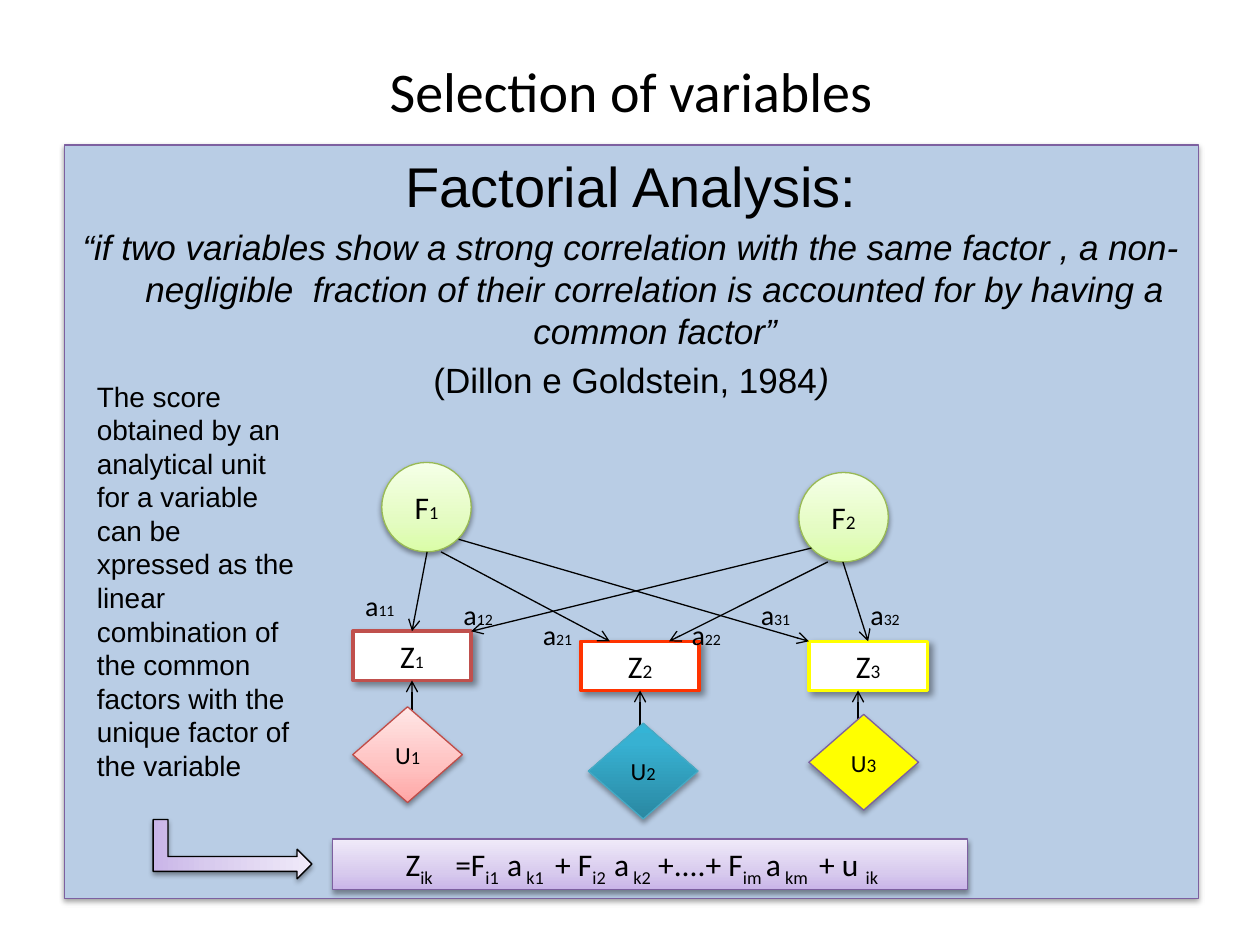
from collections import namedtuple
from dataclasses import dataclass

from lxml import etree
from pptx import Presentation
from pptx.dml import color
from pptx.enum import shapes, text
from pptx.oxml import ns
from pptx.util import Inches, Pt

Box = namedtuple("Box", "left top width height")
KIND = shapes.MSO_SHAPE


@dataclass(frozen=True)
class Theme:
    """Hold the colours, fonts, type sizes and shadows."""
    ink: str = "000000"
    panel: str = "B9CDE5"
    purple: str = "7D60A0"
    white: str = "FFFFFF"
    yellow: str = "FFFF00"
    red: str = "C0504D"
    orange: str = "FF3300"
    rose: str = "BF4C48"
    teal: str = "46AAC5"
    green: str = "98B955"
    green_fade: tuple = ((0, "DAFDA7"), (35, "E4FCC2"), (100, "F5FFE7"))
    rose_fade: tuple = ((0, "FFA6A5"), (35, "FFC0BF"), (100, "FFE7E7"))
    teal_fade: tuple = ((0, "2A88A2"), (80, "37B1D2"), (100, "34B4D6"))
    purple_fade: tuple = ((0, "C9B5E8"), (35, "D8CBEE"), (100, "F0EAF9"))
    sans: str = "Arial"
    plain: str = "Calibri"
    heading: float = 32
    quote: float = 20
    node: float = 18
    note: float = 16
    unique: float = 14
    weight: float = 0.75
    frame: float = 2
    soft: tuple = (38, 3.1, 1.6, 90)
    dim: tuple = (35, 3.1, 1.8, 90)
    slanted: tuple = (40, 4, 3, 45)


THEME = Theme()


def add_element(parent, tag, **attributes):
    """Append a drawing element to the parent."""
    return etree.SubElement(parent, ns.qn(tag), attributes)


def inner(box, left, top, width, height):
    """Return a box measured from the corner of another box."""
    return Box(box.left + left, box.top + top, width, height)


def lengths(box):
    """Convert a box to lengths."""
    return [Inches(value) for value in box]


def style_run(run, size, font=THEME.plain, italic=None, base=0):
    """Set the type of a run."""
    run.font.size = Pt(size)
    run.font.name = font
    run.font.italic = italic
    run.font.color.rgb = color.RGBColor.from_string(THEME.ink)
    if base:
        run.font._element.set("baseline", str(base * 1000))


def write_label(paragraph, letter, size, index, small):
    """Write a letter followed by a smaller index."""
    for words, points in ((letter, size), (index, small)):
        run = paragraph.add_run()
        run.text = words
        style_run(run, points)


def paint(shape, fill, line, weight=THEME.weight, shadow=THEME.soft):
    """Give a shape its fill, outline and shadow."""
    if isinstance(fill, str):
        shape.fill.solid()
        shape.fill.fore_color.rgb = color.RGBColor.from_string(fill)
    else:
        shape.fill.gradient()
        shape.fill.gradient_angle = 90
        stops = shape._element.spPr.find(".//" + ns.qn("a:gsLst"))
        for stop in list(stops):
            stops.remove(stop)
        for position, value in fill:
            stop = add_element(stops, "a:gs", pos=str(position * 1000))
            add_element(stop, "a:srgbClr", val=value)
    shape.line.color.rgb = color.RGBColor.from_string(line)
    shape.line.width = Pt(weight)
    shape.shadow.inherit = False
    alpha, blur, distance, angle = shadow
    effects = shape._element.spPr.find(ns.qn("a:effectLst"))
    outer = add_element(effects, "a:outerShdw", blurRad=str(Pt(blur)), dist=str(Pt(distance)),
                        dir=str(angle * 60000), rotWithShape="0")
    tint = add_element(outer, "a:srgbClr", val=THEME.ink)
    add_element(tint, "a:alpha", val=str(alpha * 1000))


def add_node(slide, kind, box, label, *look):
    """Add a painted shape with an indexed letter."""
    shape = slide.shapes.add_shape(kind, *lengths(box))
    paint(shape, *look)
    frame = shape.text_frame
    frame.word_wrap = False
    frame.vertical_anchor = text.MSO_ANCHOR.MIDDLE
    frame.paragraphs[0].alignment = text.PP_ALIGN.CENTER
    write_label(frame.paragraphs[0], *label)


def add_arrow(slide, box, start_x, start_y, end_x, end_y):
    """Add an arrow between two points of a box."""
    arrow = slide.shapes.add_connector(
        shapes.MSO_CONNECTOR.STRAIGHT, Inches(box.left + start_x), Inches(box.top + start_y),
        Inches(box.left + end_x), Inches(box.top + end_y))
    arrow.line.color.rgb = color.RGBColor.from_string(THEME.ink)
    arrow.line.width = Pt(THEME.weight)
    add_element(arrow.line._ln, "a:tailEnd", type="arrow")
    add_element(arrow._element.spPr, "a:effectLst")


def add_title(slide, box):
    """Fill the title placeholder."""
    title = slide.shapes.title
    title.left, title.top, title.width, title.height = lengths(box)
    title.text_frame.text = "Selection of variables"
    title.text_frame.vertical_anchor = text.MSO_ANCHOR.MIDDLE
    style_run(title.text_frame.paragraphs[0].runs[0], THEME.heading)


def add_panel(slide, box):
    """Fill the body placeholder with the heading and quotation."""
    body = slide.placeholders[1]
    body.left, body.top, body.width, body.height = lengths(box)
    paint(body, THEME.panel, THEME.purple)
    frame = body.text_frame
    frame.auto_size = text.MSO_AUTO_SIZE.NONE
    frame.text = ("Factorial Analysis:\n“if two variables show a strong correlation with the same "
                  "factor , a non- negligible  fraction of their correlation is accounted for by "
                  "having a common factor”\n(Dillon e Goldstein, 1984")
    frame.paragraphs[2].add_run().text = ")"
    for paragraph in frame.paragraphs:
        paragraph.alignment = text.PP_ALIGN.CENTER
        properties = paragraph._p.get_or_add_pPr()
        properties.set("marL", str(Inches(0.38)))
        properties.set("indent", str(Inches(-0.38)))
        add_element(properties, "a:buNone")
    heading, quotation, (source, bracket) = [paragraph.runs for paragraph in frame.paragraphs]
    style_run(heading[0], THEME.heading, THEME.sans)
    for run, italic in ((quotation[0], True), (source, False), (bracket, True)):
        style_run(run, THEME.quote, THEME.sans, italic)


def add_diagram(slide, box):
    """Draw the factors, variables, unique factors and loadings."""
    for index, left, top, small in (("1", 0.23, 0, 10.5), ("2", 3.54, 0.08, 11)):
        add_node(slide, KIND.OVAL, inner(box, left, top, 0.71, 0.71),
                 ("F", THEME.node, index, small), THEME.green_fade, THEME.green)
    for index, left, top, small, line in (("2", 1.81, 1.42, 11, THEME.orange),
                                          ("3", 3.62, 1.42, 11, THEME.yellow),
                                          ("1", 0, 1.34, 10, THEME.red)):
        add_node(slide, KIND.RECTANGLE, inner(box, left, top, 0.94, 0.39),
                 ("Z", THEME.node, index, small), THEME.white, line, THEME.frame, THEME.slanted)
    for points in ((0.59, 0.71, 0.47, 1.34), (0.7, 0.71, 2.04, 1.42), (0.84, 0.61, 3.62, 1.42),
                   (3.64, 0.68, 0.94, 1.34), (3.77, 0.79, 2.51, 1.42), (3.89, 0.79, 4.09, 1.42),
                   (0.47, 2.28, 0.47, 1.73), (2.28, 2.36, 2.28, 1.81), (4.01, 2.44, 4.01, 1.81)):
        add_arrow(slide, box, *points)
    for index, left, top in (("11", 0, 0.95), ("12", 0.78, 1.02), ("22", 2.59, 1.18),
                             ("21", 1.41, 1.18), ("31", 3.14, 1.02), ("32", 4.01, 1.02)):
        loading = slide.shapes.add_textbox(*lengths(inner(box, left, top, 0.47, 0.37)))
        loading.text_frame.word_wrap = True
        write_label(loading.text_frame.paragraphs[0], "a", THEME.note, index, 9)
    for index, left, top, small, fill, line, shadow in (
            ("2", 1.87, 2.07, 10.5, THEME.teal_fade, THEME.teal, THEME.dim),
            ("3", 3.62, 2, 11, THEME.yellow, THEME.purple, THEME.dim),
            ("1", 0, 1.94, 10.5, THEME.rose_fade, THEME.rose, THEME.soft)):
        add_node(slide, KIND.DIAMOND, inner(box, left, top, 0.87, 0.76),
                 ("U", THEME.unique, index, small), fill, line, THEME.weight, shadow)


def add_formula(slide, box):
    """Add the score equation, alternating normal and subscript runs."""
    formula = slide.shapes.add_shape(KIND.RECTANGLE, *lengths(box))
    paint(formula, THEME.purple_fade, THEME.purple)
    frame = formula.text_frame
    frame.word_wrap = True
    frame.vertical_anchor = text.MSO_ANCHOR.TOP
    frame.paragraphs[0].alignment = text.PP_ALIGN.CENTER
    parts = ("Z", "ik  ", "  =F", "i1  ", "a", " k1 ", " + F", "i2  ", "a", " k2",
             " +....+ F", "im ", "a", " km ", " + u ", "ik    ")
    for position, words in enumerate(parts):
        run = frame.paragraphs[0].add_run()
        run.text = words
        style_run(run, THEME.node, base=-25 * (position % 2))


def add_note(slide, box):
    """Add the explanation and the bent arrow below it."""
    note = slide.shapes.add_textbox(*lengths(box))
    note.text_frame.word_wrap = True
    note.text_frame.text = ("The score obtained by an analytical unit for a variable can be "
                            "xpressed as the linear combination of  the common factors with "
                            "the unique factor of the variable")
    style_run(note.text_frame.paragraphs[0].runs[0], THEME.note, THEME.sans)
    arrow = slide.shapes.add_shape(KIND.BENT_UP_ARROW, *lengths(inner(box, 0.94, 3.15, 0.47, 1.26)))
    arrow.rotation = 90
    paint(arrow, THEME.purple_fade, THEME.ink)


def main():
    """Build and save the slide."""
    presentation = Presentation()
    presentation.slide_width, presentation.slide_height = Inches(10), Inches(7.5)
    slide = presentation.slides.add_slide(presentation.slide_layouts[1])
    add_title(slide, Box(0.51, 0.21, 9, 1.01))
    add_panel(slide, Box(0.51, 1.15, 9, 5.98))
    add_diagram(slide, Box(2.8, 3.67, 4.56, 2.83))
    add_formula(slide, Box(2.64, 6.66, 5.04, 0.4))
    add_note(slide, Box(0.67, 2.96, 1.81, 3.6))
    presentation.save("out.pptx")


if __name__ == "__main__":
    main()
